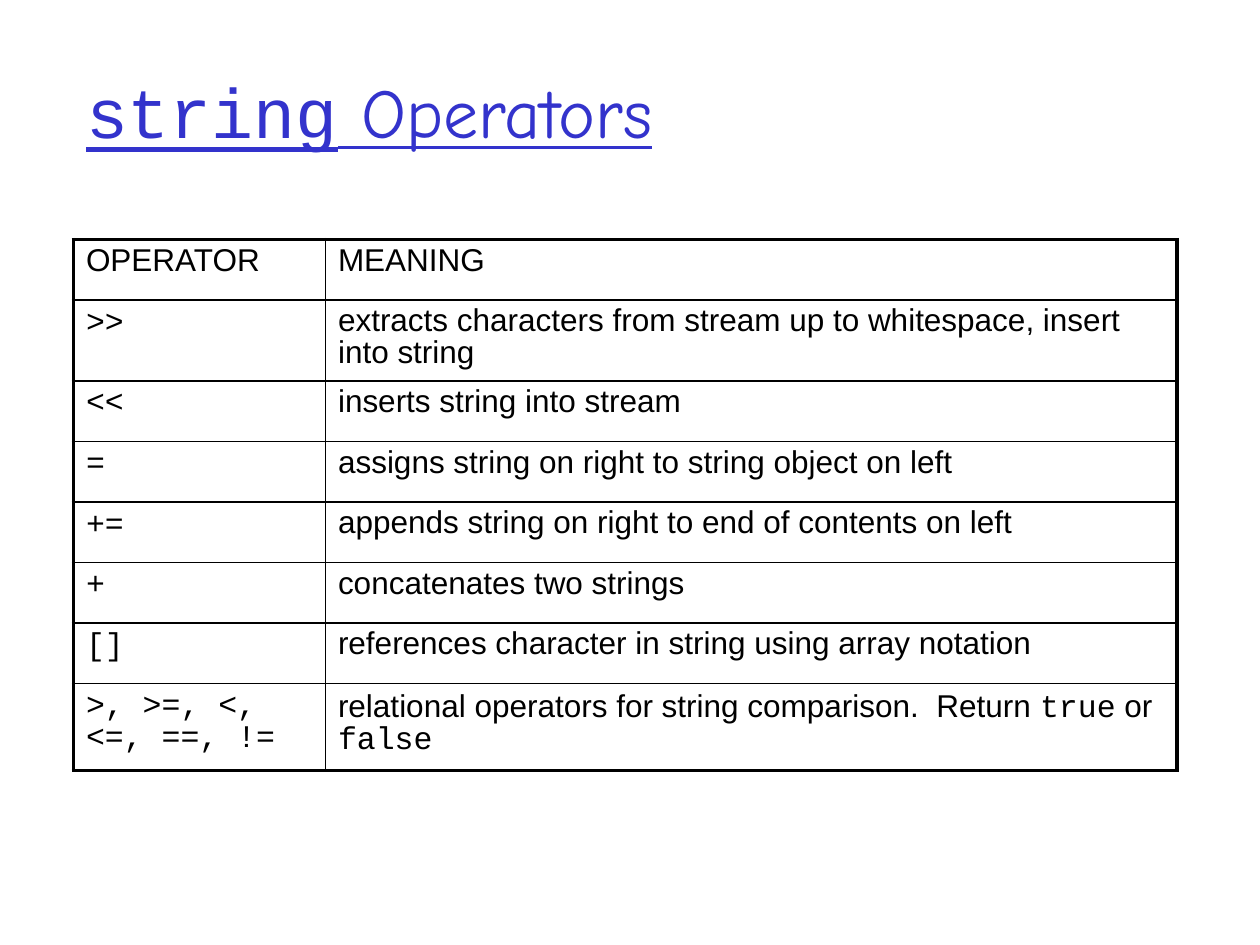
from lxml.etree import SubElement
from pptx import Presentation
from pptx.dml.color import RGBColor
from pptx.enum.text import MSO_ANCHOR, PP_ALIGN
from pptx.oxml.ns import qn
from pptx.util import Cm, Pt

BLUE = RGBColor(0x33, 0x33, 0xCC)
BLACK = RGBColor(0, 0, 0)
SANS, MONO, TITLE = "Arial", "Courier New", "Comic Neue"
THIN, THICK = Pt(1), Pt(2.25)

# Each cell is a list of paragraphs, each paragraph a list of (text, font) runs.
ROWS = [
    ([[("OPERATOR", SANS)]], [[("MEANING", SANS)]]),
    *(
        ([[(operator, MONO)]], [[(meaning, SANS)]])
        for operator, meaning in [
            (">>", "extracts characters from stream up to whitespace, insert into string"),
            ("<<", "inserts string into stream"),
            ("=", "assigns string on right to string object on left"),
            ("+=", "appends string on right to end of contents on left"),
            ("+", "concatenates two strings"),
            ("[]", "references character in string using array notation"),
        ]
    ),
    (
        [[(">, >=, <,", MONO)], [("<=, ==, !=", MONO)]],
        [[
            ("relational operators for string comparison.  Return ", SANS),
            ("true", MONO),
            (" or ", SANS),
            ("false", MONO),
        ]],
    ),
]
COL_WIDTHS = [5.08, 17.17]
ROW_HEIGHTS = [1.22, 1.63] + [1.22] * 5 + [1.75]


def add_run(p, text, font=SANS, size=18, color=BLACK, underline=None):
    r = p.add_run()
    r.text = text
    r.font.name = font
    r.font.size = Pt(size)
    r.font.color.rgb = color
    r.font.underline = underline


def set_borders(cell, **widths):
    """Draw solid black cell edges; keywords L, R, T and B give the widths."""
    tc_pr = cell._tc.get_or_add_tcPr()
    for side in "LRTB":
        ln = SubElement(tc_pr, qn(f"a:ln{side}"), w=str(widths[side]))
        fill = SubElement(ln, qn("a:solidFill"))
        SubElement(fill, qn("a:srgbClr"), val=str(BLACK))


class SlideBuilder:
    def __init__(self, prs):
        self.s = prs.slides.add_slide(prs.slide_layouts[5])

    def title(self, runs, left, top, width, height):
        sp = self.s.shapes.title
        sp.left, sp.top, sp.width, sp.height = map(Cm, (left, top, width, height))
        tf = sp.text_frame
        tf.vertical_anchor = MSO_ANCHOR.MIDDLE
        p = tf.paragraphs[0]
        p.alignment = PP_ALIGN.LEFT
        for text, font in runs:
            add_run(p, text, font=font, size=40, color=BLUE, underline=True)

    def table(self, rows, left, top, col_widths, row_heights):
        table = self.s.shapes.add_table(
            len(rows), len(col_widths), Cm(left), Cm(top),
            Cm(sum(col_widths)), Cm(sum(row_heights)),
        ).table
        table.first_row = table.horz_banding = False
        for column, width in zip(table.columns, col_widths):
            column.width = Cm(width)
        last_row, last_col = len(rows) - 1, len(col_widths) - 1
        for i, (row, height) in enumerate(zip(rows, row_heights)):
            table.rows[i].height = Cm(height)
            for j, paragraphs in enumerate(row):
                cell = table.cell(i, j)
                self.fill_cell(cell, paragraphs)
                set_borders(
                    cell,
                    L=THICK if j == 0 else THIN,
                    R=THICK if j == last_col else THIN,
                    T=THICK if i == 0 else THIN,
                    B=THICK if i == last_row else THIN,
                )
                cell.fill.background()

    def fill_cell(self, cell, paragraphs):
        tf = cell.text_frame
        for k, runs in enumerate(paragraphs):
            p = tf.add_paragraph() if k else tf.paragraphs[0]
            p.line_spacing = 0.9
            for text, font in runs:
                add_run(p, text, font=font)


def main():
    prs = Presentation()
    prs.slide_width, prs.slide_height = Cm(25.4), Cm(19.05)
    slide = SlideBuilder(prs)
    slide.title([("string", MONO), (" Operators", TITLE)], 1.48, 0.64, 21.59, 3.18)
    slide.table(ROWS, 1.48, 4.83, COL_WIDTHS, ROW_HEIGHTS)
    prs.save("out.pptx")


if __name__ == "__main__":
    main()
